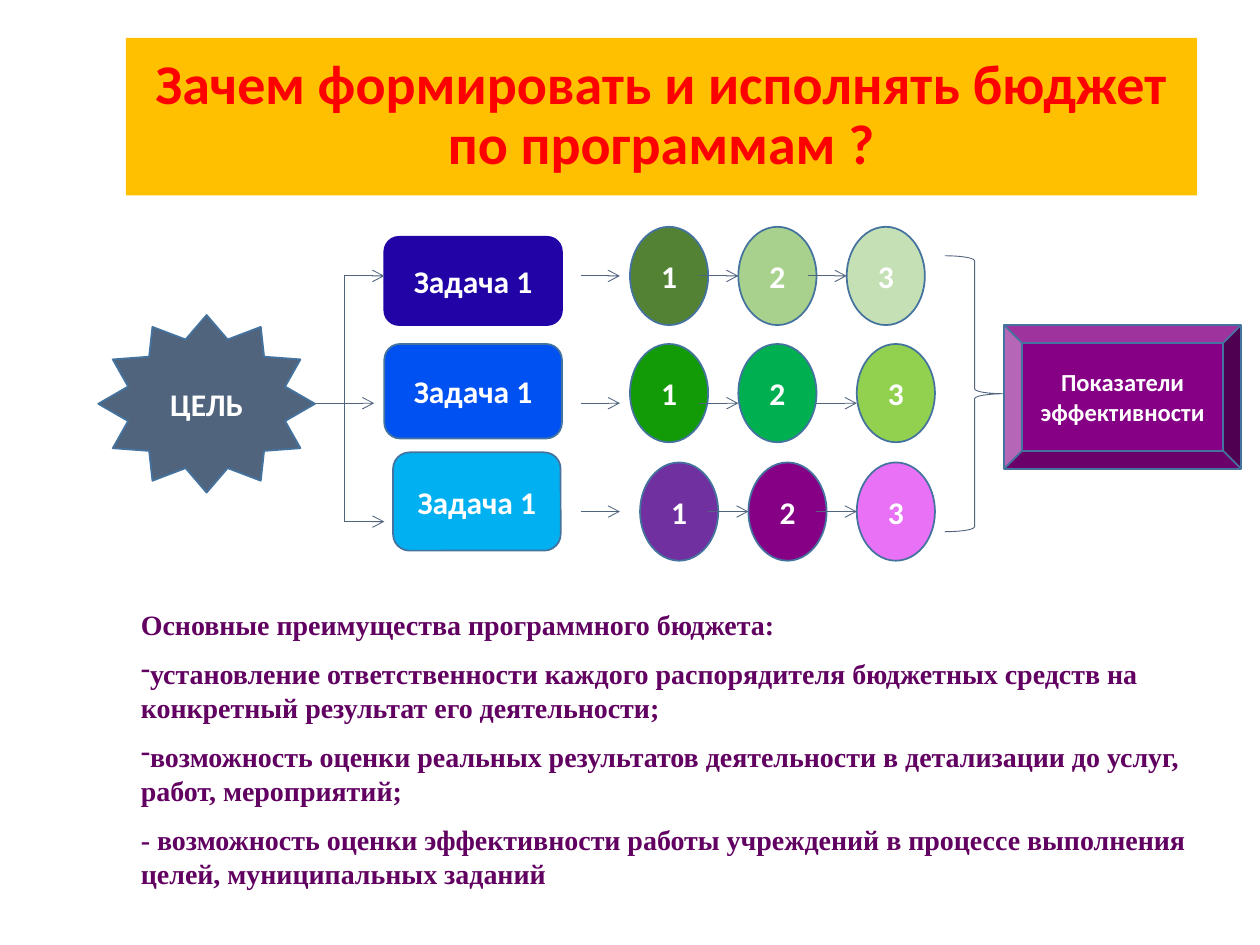
from pptx import Presentation
from pptx.dml.color import RGBColor
from pptx.enum.shapes import MSO_CONNECTOR, MSO_SHAPE
from pptx.enum.text import MSO_ANCHOR, PP_ALIGN
from pptx.oxml.ns import qn
from pptx.util import Inches, Pt
from lxml.etree import SubElement


def rgb(value):
    return RGBColor.from_string(value)


def write(p, text, size=18, font="Calibri", color="FFFFFF", align=PP_ALIGN.CENTER,
          before=0, spacing=None, bullet=None):
    p.alignment = align
    p.space_before = Pt(before)
    if spacing:
        p.line_spacing = spacing
    if bullet:
        pPr = p._p.get_or_add_pPr()
        pPr.set("marL", "0")
        pPr.set("indent", "0")
        SubElement(pPr, qn("a:buChar")).set("char", bullet)
    r = p.add_run()
    r.text = text
    r.font.size = Pt(size)
    r.font.name = font
    r.font.bold = True
    r.font.color.rgb = rgb(color)


class Board:
    outline = "43739E"
    thin = "51647E"

    def __init__(self, s):
        self.s = s

    def shape(self, kind, box, fill, text, line=outline, **fmt):
        sp = self.s.shapes.add_shape(kind, *map(Inches, box))
        sp.shadow.inherit = False
        sp.fill.solid()
        sp.fill.fore_color.rgb = rgb(fill)
        if line:
            sp.line.color.rgb = rgb(line)
            sp.line.width = Pt(1)
        else:
            sp.line.fill.background()
        tf = sp.text_frame
        tf.word_wrap = True
        tf.vertical_anchor = MSO_ANCHOR.MIDDLE
        write(tf.paragraphs[0], text, **fmt)

    def line(self, x1, y1, x2, y2, arrow=True):
        c = self.s.shapes.add_connector(MSO_CONNECTOR.STRAIGHT, *map(Inches, (x1, y1, x2, y2)))
        c.line.color.rgb = rgb(self.thin)
        c.line.width = Pt(0.5)
        spPr = c._element.spPr
        if arrow:
            SubElement(spPr.find(qn("a:ln")), qn("a:tailEnd")).set("type", "arrow")
        SubElement(spPr, qn("a:effectLst"))

    def brace(self, box):
        sp = self.s.shapes.add_shape(MSO_SHAPE.RIGHT_BRACE, *map(Inches, box))
        sp.shadow.inherit = False
        sp.fill.background()
        sp.line.color.rgb = rgb(self.thin)
        sp.line.width = Pt(0.5)

    def text(self, box, items, **fmt):
        tf = self.s.shapes.add_textbox(*map(Inches, box)).text_frame
        tf.word_wrap = True
        for i, (text, bullet) in enumerate(items):
            p = tf.add_paragraph() if i else tf.paragraphs[0]
            write(p, text, bullet=bullet, before=9 if i else 0, **fmt)


TASKS = [
    ((3.05, 1.88, 1.41, 0.7), "2203A5", "2203A5"),
    ((3.05, 2.73, 1.41, 0.75), "0051F2", Board.outline),
    ((3.12, 3.59, 1.33, 0.78), "00B0F0", Board.outline),
]
STEPS = [
    (1.8, 2.19, (5, 5.86, 6.72), ("548235", "A9D18E", "C5E0B4"), (5.55, 6.41)),
    (2.73, 3.2, (5, 5.86, 6.8), ("129B07", "00B050", "92D050"), (5.55, 6.48)),
    (3.67, 4.06, (5.08, 5.94, 6.8), ("7030A0", "860086", "E871F5"), (5.62, 6.48)),
]
BENEFITS = [
    ("Основные преимущества программного бюджета:", None),
    ("установление ответственности каждого распорядителя бюджетных средств на "
     "конкретный результат его деятельности;", "-"),
    ("возможность оценки реальных результатов деятельности в детализации до услуг, "
     "работ, мероприятий;", "-"),
    ("- возможность оценки эффективности работы учреждений в процессе выполнения "
     "целей, муниципальных заданий", None),
]


def main():
    prs = Presentation()
    prs.slide_width, prs.slide_height = Inches(10), Inches(7.5)
    b = Board(prs.slides.add_slide(prs.slide_layouts[6]))

    b.shape(MSO_SHAPE.RECTANGLE, (1, 0.3, 8.5, 1.25), "FFC000",
            "Зачем формировать и исполнять бюджет по программам ?",
            line=None, size=32, color="FF0000", spacing=0.9)
    b.shape(MSO_SHAPE.STAR_12_POINT, (0.78, 2.5, 1.72, 1.41), "51647E", "ЦЕЛЬ")
    for box, fill, line in TASKS:
        b.shape(MSO_SHAPE.FLOWCHART_ALTERNATE_PROCESS, box, fill, "Задача 1", line=line)

    b.line(2.73, 2.19, 2.73, 4.14, arrow=False)
    b.line(2.5, 3.2, 2.97, 3.2)
    for y in (2.19, 4.14):
        b.line(2.73, y, 3.05, y)

    for top, y, lefts, fills, starts in STEPS:
        for n, (left, fill) in enumerate(zip(lefts, fills), 1):
            b.shape(MSO_SHAPE.OVAL, (left, top, 0.62, 0.78), fill, str(n))
        b.line(4.61, y, 4.92, y)
        for start, end in zip(starts, lefts[1:]):
            b.line(start, y, end, y)

    b.brace((7.5, 2.03, 0.47, 2.19))
    b.shape(MSO_SHAPE.BEVEL, (7.97, 2.58, 1.88, 1.14), "860086",
            "Показатели эффективности", size=14)
    b.text((1.02, 4.77, 8.83, 2.39), BENEFITS, size=16, font="Times New Roman",
           color="610061", align=PP_ALIGN.LEFT)
    prs.save("out.pptx")


if __name__ == "__main__":
    main()
